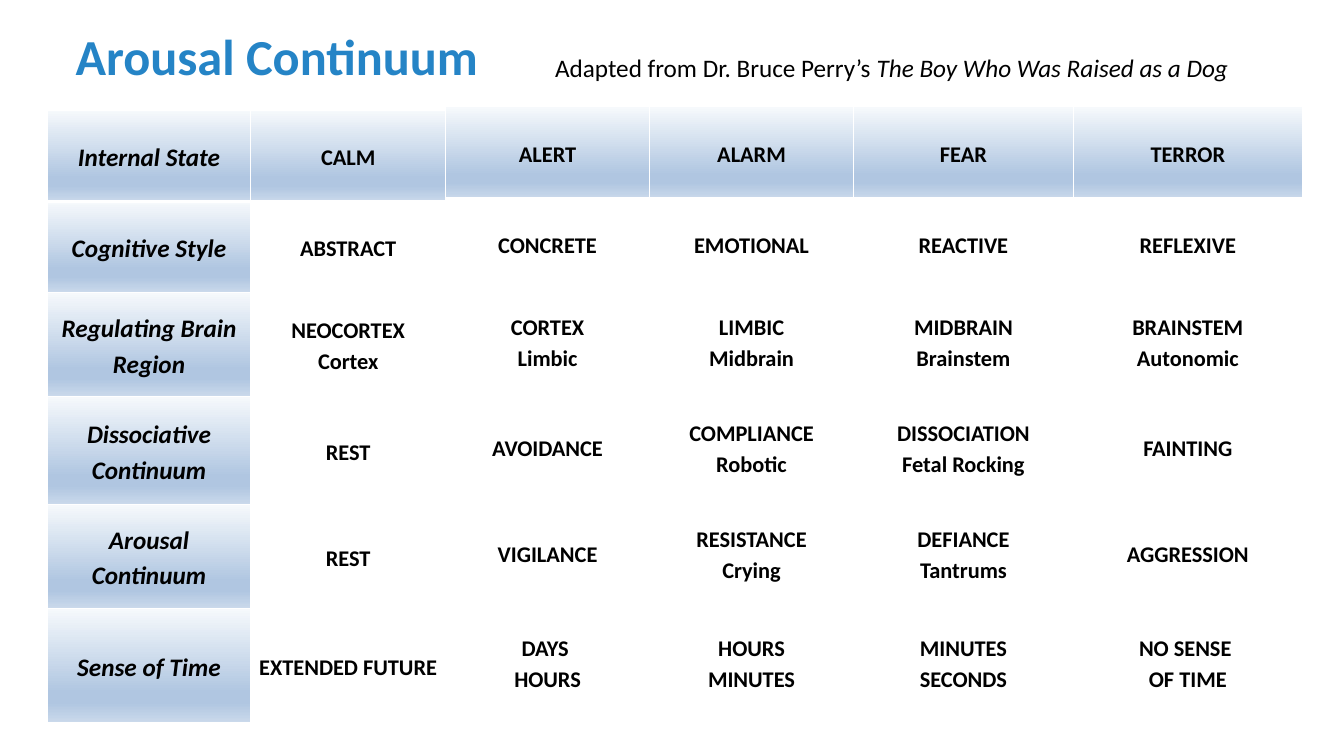
from pptx import Presentation
from pptx.dml.color import RGBColor
from pptx.enum.shapes import MSO_SHAPE
from pptx.enum.text import MSO_ANCHOR, PP_ALIGN
from pptx.oxml import parse_xml
from pptx.oxml.ns import nsdecls
from pptx.util import Cm, Pt

FONT = "Calibri"
COLORS = {
    "paper": "FFFFFF",
    "title": "2584C6",
    "text": "000000",
    "shade_top": "F6F9FC",
    "shade_mid": "B0C6E1",
    "shade_end": "CAD9EB",
}
SHADE_STOPS = [(0, "shade_top"), (74, "shade_mid"), (83, "shade_mid"), (100, "shade_end")]

ROW_HEIGHTS = [2.31, 2.29, 2.62, 2.72, 2.62, 2.87]
FIRST_LEFT = 1.19
LOW_TOP, HIGH_TOP = 2.77, 2.69

# Each state: width, top, side margin, entries from internal state to sense of time
LABELS = (5.13, LOW_TOP, 0.18, [
    "Internal State", "Cognitive Style", "Regulating Brain Region",
    "Dissociative Continuum", "Arousal Continuum", "Sense of Time"])
STATES = [
    (4.91, LOW_TOP, 0.18, [
        "CALM", "ABSTRACT", "NEOCORTEX\nCortex", "REST", "REST", "EXTENDED FUTURE"]),
    (5.14, HIGH_TOP, 0.18, [
        "ALERT", "CONCRETE", "CORTEX\nLimbic", "AVOIDANCE", "VIGILANCE", "DAYS \nHOURS"]),
    (5.14, HIGH_TOP, 0.18, [
        "ALARM", "EMOTIONAL", "LIMBIC\nMidbrain", "COMPLIANCE\nRobotic",
        "RESISTANCE\nCrying", "HOURS\nMINUTES"]),
    (5.54, HIGH_TOP, 0.18, [
        "FEAR", "REACTIVE", "MIDBRAIN\nBrainstem", "DISSOCIATION\nFetal Rocking",
        "DEFIANCE\nTantrums", "MINUTES\nSECONDS"]),
    (5.77, HIGH_TOP, 1.27, [
        "TERROR", "REFLEXIVE", "BRAINSTEM\nAutonomic", "FAINTING", "AGGRESSION",
        "NO SENSE \nOF TIME"]),
]


def rgb(name):
    return RGBColor.from_string(COLORS[name])


def format_run(run, size, color="text", bold=False, italic=False):
    run.font.name = FONT
    run.font.size = Pt(size)
    run.font.color.rgb = rgb(color)
    run.font.bold = bold
    run.font.italic = italic


def add_borders(cell, bottom_width):
    for side, width in (("L", 1), ("R", 1), ("T", 1), ("B", bottom_width)):
        cell._tc.get_or_add_tcPr().append(parse_xml(
            f'<a:ln{side} {nsdecls("a")} w="{Pt(width)}"><a:solidFill>'
            f'<a:srgbClr val="{COLORS["paper"]}"/></a:solidFill></a:ln{side}>'))


def shade(cell):
    stops = "".join(
        f'<a:gs pos="{percent * 1000}"><a:srgbClr val="{COLORS[name]}"/></a:gs>'
        for percent, name in SHADE_STOPS)
    cell._tc.get_or_add_tcPr().append(parse_xml(
        f'<a:gradFill {nsdecls("a")} rotWithShape="1"><a:gsLst>{stops}</a:gsLst>'
        '<a:lin ang="5400000" scaled="0"/></a:gradFill>'))


def fill_cell(cell, entry, margin, size, italic):
    cell.vertical_anchor = MSO_ANCHOR.MIDDLE
    cell.margin_left = cell.margin_right = Cm(margin)
    cell.margin_top = cell.margin_bottom = 0
    cell.text_frame.text = entry
    for line in cell.text_frame.paragraphs:
        line.alignment = PP_ALIGN.CENTER
        line.line_spacing = 1.15
        format_run(line.runs[0], size, bold=True, italic=italic)


def add_column(slide, left, column, is_label=False):
    width, top, margin, entries = column
    table = slide.shapes.add_table(
        len(entries), 1, Cm(left), Cm(top), Cm(width), Cm(sum(ROW_HEIGHTS))).table
    table.horz_banding = False
    for index, entry in enumerate(entries):
        table.rows[index].height = Cm(ROW_HEIGHTS[index])
        cell = table.cell(index, 0)
        fill_cell(cell, entry, margin, 18 if is_label else 16, is_label)
        add_borders(cell, 3 if index == 0 else 1)
        if is_label or index == 0:
            shade(cell)
        else:
            cell.fill.background()


def add_backdrop(slide, width, height):
    backdrop = slide.shapes.add_shape(MSO_SHAPE.RECTANGLE, 0, 0, width, height)
    backdrop.shadow.inherit = False
    backdrop.fill.solid()
    backdrop.fill.fore_color.rgb = rgb("paper")
    backdrop.line.color.rgb = rgb("paper")
    backdrop.line.width = Pt(0.75)
    slide.shapes._spTree.insert(2, backdrop._element)


def add_title(slide):
    title = slide.shapes.title
    title.left, title.top, title.width, title.height = Cm(1.65), Cm(0.56), Cm(11.84), Cm(1.68)
    title.text_frame.text = "Arousal Continuum"
    title.text_frame.vertical_anchor = MSO_ANCHOR.MIDDLE
    heading = title.text_frame.paragraphs[0]
    heading.alignment = PP_ALIGN.LEFT
    format_run(heading.runs[0], 36, "title", bold=True)


def add_credit(slide):
    credit = slide.shapes.add_textbox(Cm(13.74), Cm(1.19), Cm(20), Cm(1.02)).text_frame
    credit.word_wrap = True
    sentence = credit.paragraphs[0]
    for words, italic in (("Adapted from Dr. Bruce Perry’s ", False),
                          ("The Boy Who Was Raised as a Dog", True)):
        run = sentence.add_run()
        run.text = words
        format_run(run, 18, italic=italic)


def main():
    deck = Presentation()
    deck.slide_width, deck.slide_height = Cm(33.87), Cm(19.05)
    slide = deck.slides.add_slide(deck.slide_layouts[5])

    # Backdrop and heading
    add_backdrop(slide, deck.slide_width, deck.slide_height)
    add_title(slide)

    # Row labels, then one table per internal state, side by side
    add_column(slide, FIRST_LEFT, LABELS, is_label=True)
    left = FIRST_LEFT + LABELS[0]
    for state in STATES:
        add_column(slide, left, state)
        left += state[0]

    # Credit line
    add_credit(slide)
    deck.save("out.pptx")


if __name__ == "__main__":
    main()
